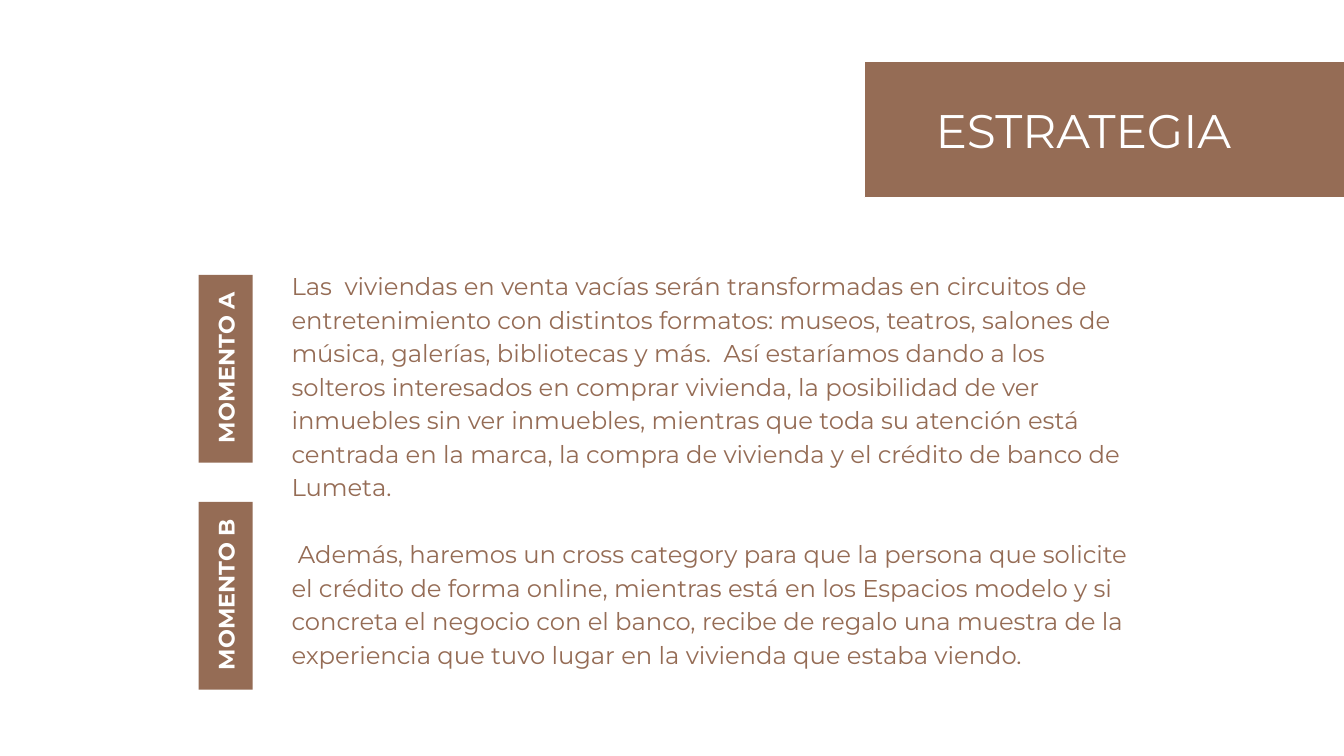
import pptx
import pptx.util
import pptx.dml.color
import pptx.enum.shapes
import pptx.enum.text
import pptx.oxml

Pt = pptx.util.Pt
RECT = pptx.enum.shapes.MSO_SHAPE.RECTANGLE
LEFT = pptx.enum.text.PP_ALIGN.LEFT
ANCHOR = pptx.enum.text.MSO_ANCHOR
FIT = pptx.enum.text.MSO_AUTO_SIZE
FACE = "Montserrat"
COLORS = {"brown": "956C55", "white": "FFFFFF"}
PLAN = [
    "Las  viviendas en venta vacías serán transformadas en circuitos de "
    "entretenimiento con distintos formatos: museos, teatros, salones de "
    "música, galerías, bibliotecas y más.  Así estaríamos dando a los "
    "solteros interesados en comprar vivienda, la posibilidad de ver "
    "inmuebles sin ver inmuebles, mientras que toda su atención está "
    "centrada en la marca, la compra de vivienda y el crédito de banco de "
    "Lumeta.",
    " Además, haremos un cross category para que la persona que solicite "
    "el crédito de forma online, mientras está en los Espacios modelo y si "
    "concreta el negocio con el banco, recibe de regalo una muestra de la "
    "experiencia que tuvo lugar en la vivienda que estaba viendo.",
]


def color(name):
    return pptx.dml.color.RGBColor.from_string(COLORS[name])


def place(shape, x, y, w, h):
    shape.left, shape.top, shape.width, shape.height = Pt(x), Pt(y), Pt(w), Pt(h)


def block(slide, x, y, w, h):
    """Add a plain brown rectangle."""
    rect = slide.shapes.add_shape(RECT, Pt(x), Pt(y), Pt(w), Pt(h))
    rect.shadow.inherit = False
    rect.fill.solid()
    rect.fill.fore_color.rgb = color("brown")
    rect.line.fill.background()
    return rect


def write(shape, lines, size, tint, anchor, bold=False):
    """Fill a shape with left-aligned paragraphs."""
    frame = shape.text_frame
    frame.text = "\n".join(lines)
    frame.word_wrap = True
    frame.auto_size = FIT.NONE
    frame.vertical_anchor = anchor
    frame.margin_left = frame.margin_right = Pt(7.2)
    frame.margin_top = frame.margin_bottom = Pt(7.2)
    for para in frame.paragraphs:
        para.alignment = LEFT
        para.space_before = Pt(0)
        para.font.name = FACE
        para.font.size = Pt(size)
        para.font.bold = bold
        para.font.color.rgb = color(tint)
    return frame.paragraphs


def banner(slide, x, y, w, h):
    rect = block(slide, x, y, w, h)
    rect.line.color.rgb = color("white")
    rect.line.width = Pt(0.75)
    title = slide.shapes.title
    place(title, x + 31, y + 14.4, w - 60.5, h - 28)
    write(title, ["ESTRATEGIA"], 25.2, "white", ANCHOR.MIDDLE)
    # Bring the title in front of its banner
    title.element.getparent().append(title.element)


def story(slide, x, y, w, h):
    body = slide.placeholders[1]
    place(body, x, y, w, h)
    paras = write(body, PLAN, 13, "brown", ANCHOR.TOP)
    for para in paras:
        para.line_spacing = 1.15
        # No bullet or hanging indent
        props = para._p.get_or_add_pPr()
        props.set("marL", "0")
        props.set("indent", "0")
        props.append(pptx.oxml.parse_xml(
            '<a:buNone xmlns:a='
            '"http://schemas.openxmlformats.org/drawingml/2006/main"/>'))
    paras[1].space_before = Pt(18)


def tabs(slide, x, y, w, h):
    """Stack upright labels, each turned about its own centre."""
    gap = 21
    tall = (h - gap) / 2
    for row, name in enumerate("AB"):
        top = y + row * (tall + gap)
        tab = block(slide, x + (w - tall) / 2, top + (tall - w) / 2, tall, w)
        tab.rotation = 270
        write(tab, [f" MOMENTO {name}"], 12, "white", ANCHOR.MIDDLE, True)


def main():
    deck = pptx.Presentation()
    deck.slide_width, deck.slide_height = Pt(720), Pt(405)
    slide = deck.slides.add_slide(deck.slide_layouts[1])
    story(slide, 149, 136, 470, 269)
    banner(slide, 463, 32.6, 262.8, 73.4)
    tabs(slide, 106.4, 147.2, 29, 222.2)
    deck.save("out.pptx")


if __name__ == "__main__":
    main()
